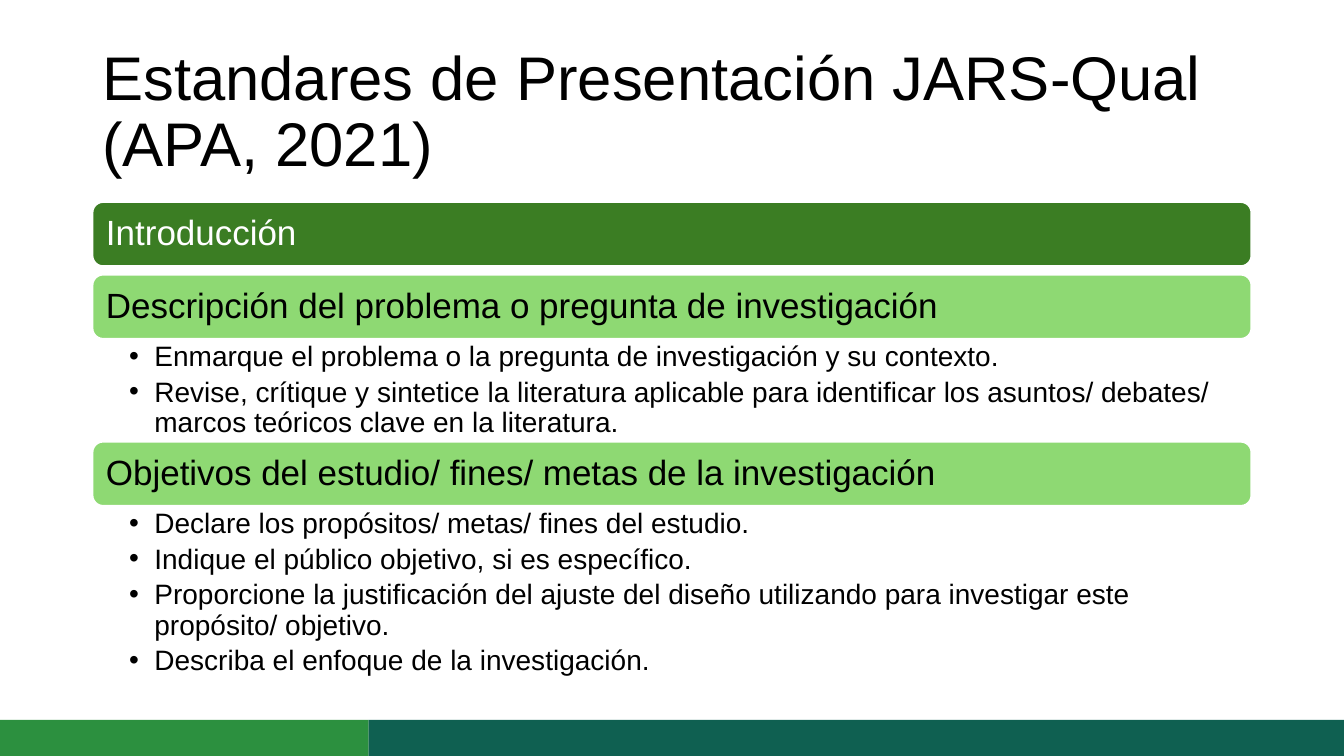
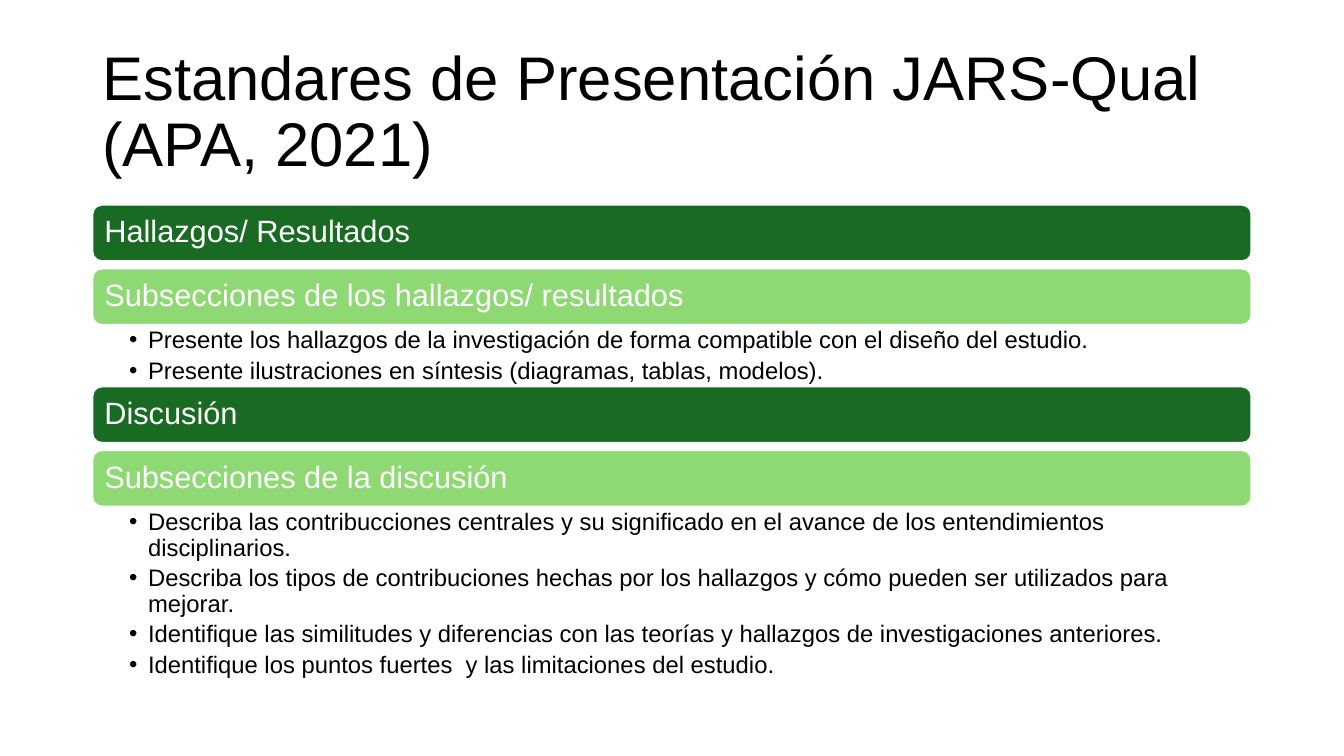
"""Builds two slides on the JARS-Qual reporting standards."""
from pptx import Presentation
from pptx.dml.color import RGBColor
from pptx.enum.shapes import MSO_SHAPE
from pptx.enum.text import MSO_ANCHOR, PP_ALIGN
from pptx.oxml.ns import qn
from pptx.util import Pt
from lxml.etree import SubElement

COLOURS = {
    "black": "000000", "white": "FFFFFF",
    "section": "3B7D23", "dark section": "196B24", "subsection": "8ED973",
    "footer": "0F6051", "footer accent": "2C903F",
}
FONT = "Arial"
SLIDE_WIDTH, SLIDE_HEIGHT = 960, 540
LEFT, CONTENT_WIDTH = 66, 828
FOOTER_TOP, ACCENT_WIDTH = 514.25, 263.25
LINE_SPACING = 0.9
TITLE = "Estandares de Presentación JARS-Qual (APA, 2021)"

SLIDES = [
    {
        "top": 144.2, "band_height": 46, "gap": 5.9, "band_size": 25,
        "bullet_size": 20, "indent": 18, "right_inset": 13.5, "footer": True,
        "blocks": [
            ("Introducción", "section", "white", [], 0),
            ("Descripción del problema o pregunta de investigación", "subsection", "black", [
                "Enmarque el problema o la pregunta de investigación y su contexto.",
                "Revise, crítique y sintetice la literatura aplicable para identificar los asuntos/ debates/ marcos teóricos clave en la literatura.",
            ], 73.3),
            ("Objetivos del estudio/ fines/ metas de la investigación", "subsection", "black", [
                "Declare los propósitos/ metas/ fines del estudio.",
                "Indique el público objetivo, si es específico.",
                "Proporcione la justificación del ajuste del diseño utilizando para investigar este propósito/ objetivo.",
                "Describa el enfoque de la investigación.",
            ], 124.6),
        ],
    },
    {
        "top": 146.2, "band_height": 40.4, "gap": 5.1, "band_size": 22,
        "bullet_size": 17, "indent": 13.5, "right_inset": 12.2, "footer": False,
        "blocks": [
            ("Hallazgos/ Resultados", "dark section", "white", [], 0),
            ("Subsecciones de los hallazgos/ resultados", "subsection", "white", [
                "Presente los hallazgos de la investigación de forma compatible con el diseño del estudio.",
                "Presente ilustraciones en síntesis (diagramas, tablas, modelos).",
            ], 43.9),
            ("Discusión", "dark section", "white", [], 0),
            ("Subsecciones de la discusión", "subsection", "white", [
                "Describa las contribucciones centrales y su significado en el avance de los entendimientos disciplinarios.",
                "Describa los tipos de contribuciones hechas por los hallazgos y cómo pueden ser utilizados para mejorar.",
                "Identifique las similitudes y diferencias con las teorías y hallazgos de investigaciones anteriores.",
                "Identifique los puntos fuertes  y las limitaciones del estudio.",
            ], 121.7),
        ],
    },
]


def colour(name):
    """Return the named colour."""
    return RGBColor.from_string(COLOURS[name])


def set_frame(shape, anchor, insets):
    """Set wrapping, anchor and the left, top, right and bottom insets."""
    frame = shape.text_frame
    frame.word_wrap = True
    frame.vertical_anchor = anchor
    frame.margin_left, frame.margin_top, frame.margin_right, frame.margin_bottom = map(Pt, insets)
    return frame


def format_paragraph(paragraph, size, colour_name):
    """Apply the shared paragraph and run style."""
    paragraph.alignment = PP_ALIGN.LEFT
    paragraph.line_spacing = LINE_SPACING
    for run in paragraph.runs:
        run.font.name = FONT
        run.font.size = Pt(size)
        run.font.color.rgb = colour(colour_name)


def add_box(slide, preset, left, top, width, height, fill):
    """Add a filled shape without outline or shadow."""
    shape = slide.shapes.add_shape(preset, Pt(left), Pt(top), Pt(width), Pt(height))
    shape.shadow.inherit = False
    shape.fill.solid()
    shape.fill.fore_color.rgb = colour(fill)
    shape.line.fill.background()
    return shape


def add_title(slide):
    """Add the shared title."""
    title = slide.shapes.add_textbox(Pt(LEFT), Pt(28.8), Pt(CONTENT_WIDTH), Pt(104.4))
    frame = set_frame(title, MSO_ANCHOR.MIDDLE, (7.2, 3.6, 7.2, 3.6))
    frame.text = TITLE
    format_paragraph(frame.paragraphs[0], 44, "black")


def add_band(slide, top, height, text, fill, text_colour, size):
    """Add a rounded heading band."""
    band = add_box(slide, MSO_SHAPE.ROUNDED_RECTANGLE, LEFT, top, CONTENT_WIDTH, height, fill)
    band.line.color.rgb = colour("white")
    band.line.width = Pt(1.5)
    frame = set_frame(band, MSO_ANCHOR.MIDDLE, (0.3 * size,) * 4)
    frame.text = text
    format_paragraph(frame.paragraphs[0], size, text_colour)


def add_bullets(slide, top, height, items, layout):
    """Add the bulleted text under a band."""
    box = slide.shapes.add_textbox(Pt(LEFT), Pt(top), Pt(CONTENT_WIDTH), Pt(height))
    frame = set_frame(box, MSO_ANCHOR.TOP, (26.3, 2.2, layout["right_inset"], 2.2))
    frame.text = "\n".join(items)
    for paragraph in frame.paragraphs:
        format_paragraph(paragraph, layout["bullet_size"], "black")
        paragraph.space_after = Pt(0.2 * layout["bullet_size"])
        properties = paragraph._p.get_or_add_pPr()
        properties.set("marL", str(Pt(layout["indent"])))
        properties.set("indent", str(-Pt(layout["indent"])))
        SubElement(properties, qn("a:buFont"), typeface=FONT)
        SubElement(properties, qn("a:buChar"), char="•")


def add_footer(slide):
    """Add the two-colour footer, side by side."""
    height = SLIDE_HEIGHT - FOOTER_TOP
    parts = (
        (0, ACCENT_WIDTH, "footer accent"),
        (ACCENT_WIDTH, SLIDE_WIDTH - ACCENT_WIDTH, "footer"),
    )
    for left, width, fill in parts:
        add_box(slide, MSO_SHAPE.RECTANGLE, left, FOOTER_TOP, width, height, fill)


def build_slide(presentation, layout):
    """Stack the bands and bullets of one slide."""
    slide = presentation.slides.add_slide(presentation.slide_layouts[6])
    add_title(slide)
    top = layout["top"]
    for heading, fill, text_colour, items, bullets_height in layout["blocks"]:
        add_band(slide, top, layout["band_height"], heading, fill, text_colour, layout["band_size"])
        top += layout["band_height"]
        if items:
            add_bullets(slide, top, bullets_height, items, layout)
            top += bullets_height
        else:
            top += layout["gap"]
    if layout["footer"]:
        add_footer(slide)


def main():
    """Build and save the presentation."""
    presentation = Presentation()
    presentation.slide_width, presentation.slide_height = Pt(SLIDE_WIDTH), Pt(SLIDE_HEIGHT)
    for layout in SLIDES:
        build_slide(presentation, layout)
    presentation.save("out.pptx")


if __name__ == "__main__":
    main()
